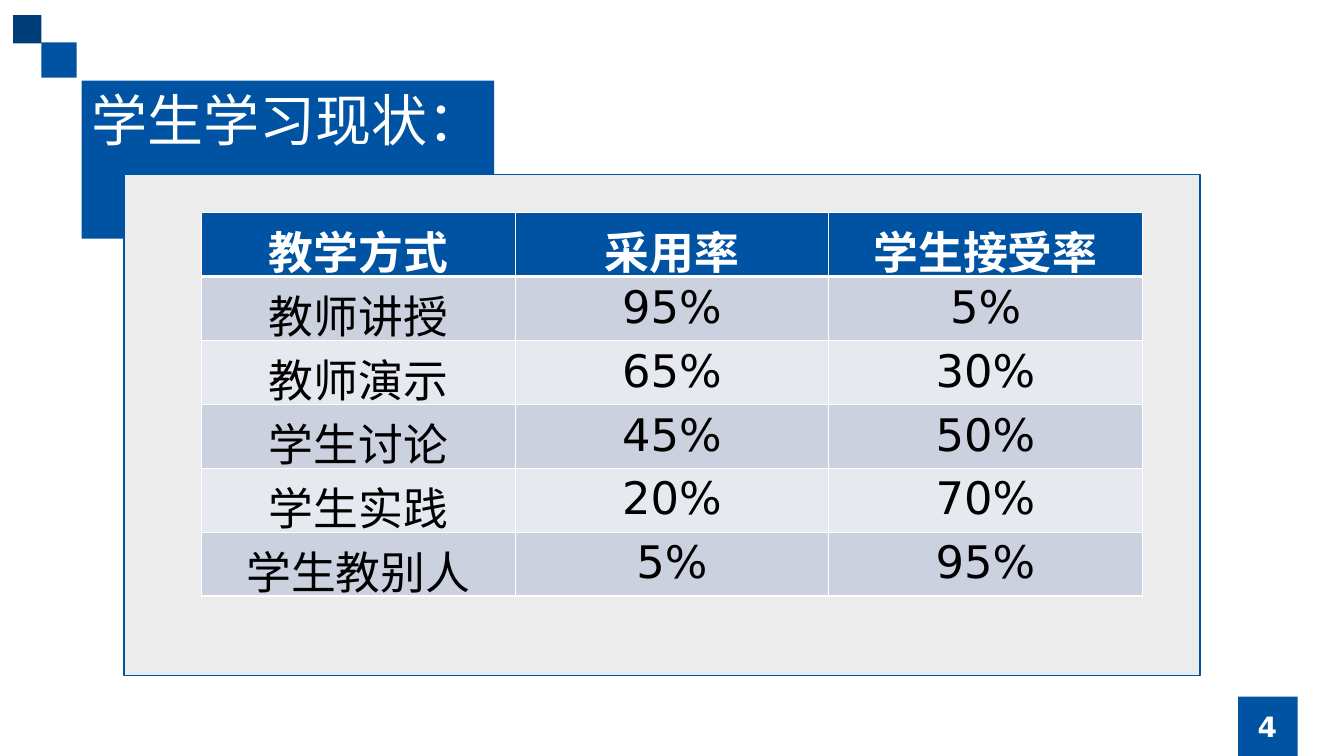
from dataclasses import dataclass
from typing import Any

from pptx import Presentation
from pptx import util as u
from pptx.dml.color import RGBColor
from pptx.enum import shapes, text
from pptx.oxml import ns, xmlchemy

BLUE = RGBColor(0x00, 0x53, 0xA3)
NAVY = RGBColor(0x00, 0x3E, 0x7A)
PANEL_GREY = RGBColor(0xEC, 0xEC, 0xEC)
BAND_DARK = RGBColor(0xCC, 0xD1, 0xE0)
BAND_LIGHT = RGBColor(0xE7, 0xE9, 0xF0)
WHITE = RGBColor(0xFF, 0xFF, 0xFF)
BLACK = RGBColor(0x00, 0x00, 0x00)
FONT = "DejaVu Sans"
SLIDE_WIDTH, SLIDE_HEIGHT = u.Inches(13.33), u.Inches(7.5)


@dataclass(frozen=True)
class Area:
    """A rectangle in percent of the slide's width and height."""
    left: float
    top: float
    width: float
    height: float

    def lengths(self) -> tuple[int, int, int, int]:
        return (round(self.left * SLIDE_WIDTH / 100), round(self.top * SLIDE_HEIGHT / 100),
                round(self.width * SLIDE_WIDTH / 100), round(self.height * SLIDE_HEIGHT / 100))


@dataclass(frozen=True)
class Block:
    area: Area
    fill: RGBColor
    line: RGBColor | None = None


BLOCKS = [
    Block(Area(3.08, 5.6, 2.63, 4.67), BLUE),
    Block(Area(0.98, 2, 2.1, 3.73), NAVY),
    Block(Area(92.12, 92.13, 4.43, 7.87), BLUE),
    Block(Area(9.23, 23.07, 80.05, 66.27), PANEL_GREY, BLUE),
]
TITLE_AREA = Area(6.08, 10.67, 30.68, 10.8)
NUMBER_AREA = Area(88.6, 93.47, 11.4, 5.33)
TABLE_AREA = Area(15, 28.13, 70, 50.67)
TABLE_ROWS = [
    ("教学方式", "采用率", "学生接受率"),
    ("教师讲授", "95%", "5%"),
    ("教师演示", "65%", "30%"),
    ("学生讨论", "45%", "50%"),
    ("学生实践", "20%", "70%"),
    ("学生教别人", "5%", "95%"),
]


def set_all(target: Any, values: dict[str, Any]) -> None:
    for name, value in values.items():
        setattr(target, name, value)


def write(frame: Any, words: str, size: int, color: RGBColor, bold: bool, align: Any) -> None:
    para = frame.paragraphs[0]
    para.alignment = align
    span = para.add_run()
    span.text = words
    set_all(span.font, {"name": FONT, "size": u.Pt(size), "bold": bold})
    span.font.color.rgb = color


def place(shape: Any, area: Area) -> None:
    set_all(shape, dict(zip(("left", "top", "width", "height"), area.lengths())))


def add_block(page: Any, block: Block) -> None:
    box = page.shapes.add_shape(shapes.MSO_SHAPE.RECTANGLE, *block.area.lengths())
    box.shadow.inherit = False
    box.fill.solid()
    box.fill.fore_color.rgb = block.fill
    if block.line is None:
        box.line.fill.background()
    else:
        box.line.color.rgb = block.line
        box.line.width = u.Pt(1)


def add_title(page: Any, words: str) -> None:
    title = page.shapes.title
    place(title, TITLE_AREA)
    title.fill.solid()
    title.fill.fore_color.rgb = BLUE
    set_all(title.text_frame, {"word_wrap": False, "vertical_anchor": text.MSO_ANCHOR.TOP,
                               "auto_size": text.MSO_AUTO_SIZE.SHAPE_TO_FIT_TEXT})
    write(title.text_frame, words, 40, WHITE, False, text.PP_ALIGN.LEFT)


def add_page_number(page: Any, number: str) -> None:
    frame = page.shapes.add_textbox(*NUMBER_AREA.lengths()).text_frame
    set_all(frame, {"word_wrap": True, "vertical_anchor": text.MSO_ANCHOR.MIDDLE})
    write(frame, number, 20, WHITE, True, text.PP_ALIGN.CENTER)


def set_borders(cell: Any, widths: dict[str, int]) -> None:
    """Draw white borders; widths maps the sides L, R, T, B, in that order, to points."""
    properties = cell._tc.get_or_add_tcPr()
    for side, width in widths.items():
        line = xmlchemy.OxmlElement(f"a:ln{side}")
        line.set("w", str(u.Pt(width)))
        fill = xmlchemy.OxmlElement("a:solidFill")
        color = xmlchemy.OxmlElement("a:srgbClr")
        color.set("val", str(WHITE))
        fill.append(color)
        line.append(fill)
        properties.append(line)


def add_rates_table(page: Any) -> None:
    table = page.shapes.add_table(len(TABLE_ROWS), len(TABLE_ROWS[0]),
                                  *TABLE_AREA.lengths()).table
    for row, values in enumerate(TABLE_ROWS):
        header = row == 0
        band = BLUE if header else (BAND_LIGHT, BAND_DARK)[row % 2]
        for column, words in enumerate(values):
            cell = table.cell(row, column)
            set_borders(cell, {"L": 1, "R": 1, "T": 3 if row == 1 else 1,
                               "B": 3 if header else 1})
            cell.fill.solid()
            cell.fill.fore_color.rgb = band
            write(cell.text_frame, words, 32, WHITE if header else BLACK, header,
                  text.PP_ALIGN.CENTER)


def main() -> None:
    deck = Presentation()
    set_all(deck, {"slide_width": SLIDE_WIDTH, "slide_height": SLIDE_HEIGHT})
    page = deck.slides.add_slide(deck.slide_layouts.get_by_name("Title Only"))
    for block in BLOCKS:
        add_block(page, block)
    add_page_number(page, "4")
    add_title(page, "学生学习现状：")
    add_rates_table(page)
    deck.save("out.pptx")


if __name__ == "__main__":
    main()
